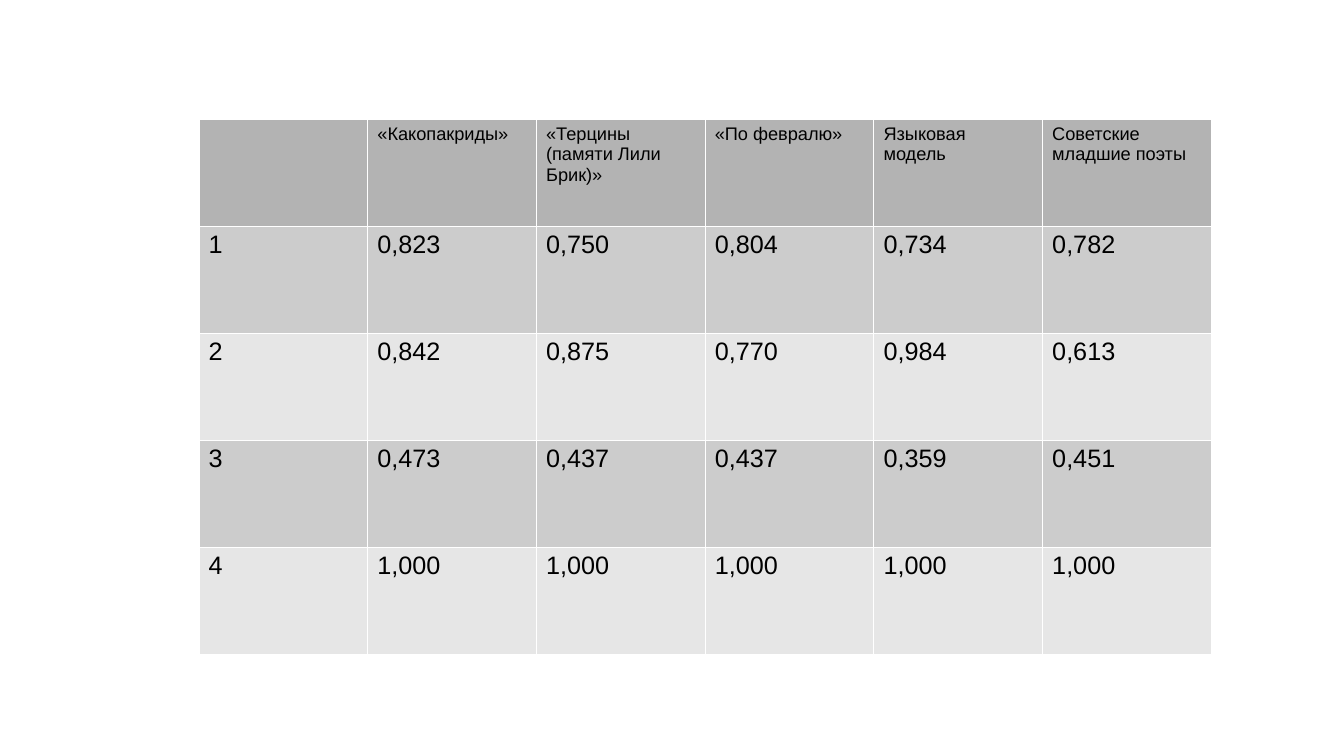
from lxml import etree
from pptx import Presentation
from pptx.dml.color import RGBColor
from pptx.oxml import ns
from pptx.util import Inches, Pt

BLACK = RGBColor(0x00, 0x00, 0x00)
WHITE = RGBColor(0xFF, 0xFF, 0xFF)
HEADER_GREY = RGBColor(0xB3, 0xB3, 0xB3)
BAND_GREYS = (RGBColor(0xCC, 0xCC, 0xCC), RGBColor(0xE6, 0xE6, 0xE6))
BORDER_WIDTH = Pt(0.06)

SCORES = [
    ("", "«Какопакриды»", "«Терцины\n(памяти Лили Брик)»", "«По февралю»",
     "Языковая модель", "Советские младшие поэты"),
    ("1", "0,823", "0,750", "0,804", "0,734", "0,782"),
    ("2", "0,842", "0,875", "0,770", "0,984", "0,613"),
    ("3", "0,473", "0,437", "0,437", "0,359", "0,451"),
    ("4", "1,000", "1,000", "1,000", "1,000", "1,000"),
]


def add_borders(cell):
    """Draw a thin white line on every side of the cell."""
    properties = cell._tc.get_or_add_tcPr()
    for side in ("a:lnL", "a:lnR", "a:lnT", "a:lnB"):
        line = etree.SubElement(properties, ns.qn(side), w=str(BORDER_WIDTH))
        fill = etree.SubElement(line, ns.qn("a:solidFill"))
        etree.SubElement(fill, ns.qn("a:srgbClr"), val=str(WHITE))


def format_cell(cell, words, size, colour):
    """Fill one cell with its words and its look."""
    add_borders(cell)
    cell.fill.solid()
    cell.fill.fore_color.rgb = colour
    cell.text = words
    for para in cell.text_frame.paragraphs:
        para.font.name = "Arial"
        para.font.size = Pt(size)
        para.font.bold = False
        para.font.color.rgb = BLACK


def add_score_table(page, left, top, width, height):
    """Place the table of scores in the given box."""
    table = page.shapes.add_table(
        len(SCORES), len(SCORES[0]), left, top, width, height).table
    for row, values in enumerate(SCORES):
        size = 18 if row else 13
        colour = BAND_GREYS[(row - 1) % 2] if row else HEADER_GREY
        for column, words in enumerate(values):
            format_cell(table.cell(row, column), words, size, colour)


def main():
    """Build the deck and save it."""
    deck = Presentation()
    deck.slide_width, deck.slide_height = Inches(13.33), Inches(7.5)
    page = deck.slides.add_slide(deck.slide_layouts[6])
    add_score_table(page, Inches(1.97), Inches(1.18), Inches(10.04), Inches(5.31))
    deck.save("out.pptx")


if __name__ == "__main__":
    main()
